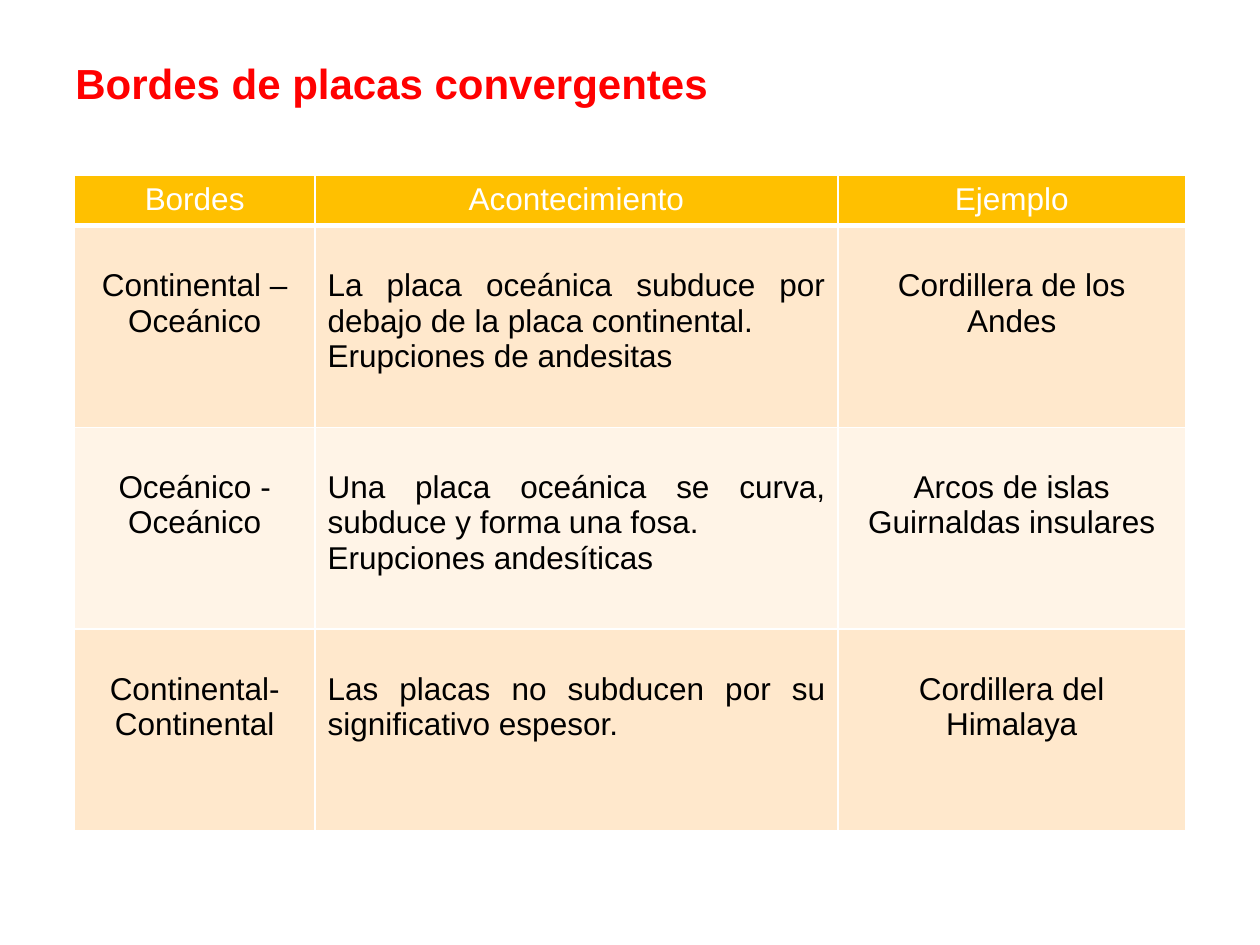
import pptx
import pptx.util
import pptx.dml.color
import pptx.enum.text
import pptx.oxml
import pptx.oxml.ns

Pt = pptx.util.Pt
RGBColor = pptx.dml.color.RGBColor
ALIGN = pptx.enum.text.PP_ALIGN
ANCHOR = pptx.enum.text.MSO_ANCHOR

RED = RGBColor(0xFF, 0x00, 0x00)
BLACK = RGBColor(0x00, 0x00, 0x00)
WHITE = RGBColor(0xFF, 0xFF, 0xFF)
AMBER = RGBColor(0xFF, 0xC0, 0x00)
PEACH = RGBColor(0xFF, 0xE8, 0xCC)
CREAM = RGBColor(0xFF, 0xF4, 0xE7)

TITLE_FONT = {"name": "Arial", "size": Pt(24), "bold": True}
TABLE_FONT = {"name": "Arial", "size": Pt(18), "bold": False}
CELL_MARGINS = {
    "margin_left": Pt(7.2),
    "margin_right": Pt(7.2),
    "margin_top": Pt(3.6),
    "margin_bottom": Pt(3.6),
}
BODY_MARGINS = {**CELL_MARGINS, "margin_top": Pt(24.3)}

COLUMN_WIDTHS = [137.5, 298.8, 198.7]
HEADER_HEIGHT = 28.8
BODY_HEIGHT = 115.2
BODY_ALIGNMENTS = [ALIGN.CENTER, ALIGN.JUSTIFY, ALIGN.CENTER]
HEADINGS = ["Bordes", "Acontecimiento", "Ejemplo"]
BOUNDARIES = [
    [
        ["Continental – Oceánico"],
        [
            "La placa oceánica subduce por debajo de la placa continental.",
            "Erupciones de andesitas",
        ],
        ["Cordillera de los Andes"],
    ],
    [
        ["Oceánico - Oceánico"],
        [
            "Una placa oceánica se curva, subduce y forma una fosa.",
            "Erupciones andesíticas",
        ],
        ["Arcos de islas", "Guirnaldas insulares"],
    ],
    [
        ["Continental-Continental"],
        ["Las placas no subducen por su significativo espesor."],
        ["Cordillera del Himalaya"],
    ],
]


def set_values(target, values):
    for name, value in values.items():
        setattr(target, name, value)


def write_paragraphs(frame, lines, font, color, alignment):
    for index, line in enumerate(lines):
        para = frame.paragraphs[0] if index == 0 else frame.add_paragraph()
        para.alignment = alignment
        span = para.add_run()
        span.text = line
        set_values(span.font, font)
        span.font.color.rgb = color


def set_borders(cell, bottom_width):
    properties = cell._tc.get_or_add_tcPr()
    widths = {"lnL": 1, "lnR": 1, "lnT": 1, "lnB": bottom_width}
    for index, (side, width) in enumerate(widths.items()):
        border = pptx.oxml.parse_xml(
            f'<a:{side} {pptx.oxml.ns.nsdecls("a")} w="{Pt(width)}">'
            f'<a:solidFill><a:srgbClr val="{WHITE}"/></a:solidFill></a:{side}>'
        )
        properties.insert(index, border)


def fill_cell(cell, lines, fill, color, alignment, margins, bottom_width):
    set_values(cell, margins)
    cell.vertical_anchor = ANCHOR.TOP
    cell.fill.solid()
    cell.fill.fore_color.rgb = fill
    set_borders(cell, bottom_width)
    write_paragraphs(cell.text_frame, lines, TABLE_FONT, color, alignment)


def add_title(page, left, top, width, height):
    box = page.shapes.add_textbox(Pt(left), Pt(top), Pt(width), Pt(height))
    frame = box.text_frame
    set_values(frame, {"word_wrap": True, "vertical_anchor": ANCHOR.MIDDLE})
    write_paragraphs(
        frame, ["Bordes de placas convergentes"], TITLE_FONT, RED, ALIGN.LEFT
    )
    frame.paragraphs[0].line_spacing = 0.9


def add_boundary_table(page, left, top):
    row_heights = [HEADER_HEIGHT] + [BODY_HEIGHT] * len(BOUNDARIES)
    table = page.shapes.add_table(
        len(row_heights), len(COLUMN_WIDTHS),
        Pt(left), Pt(top), Pt(sum(COLUMN_WIDTHS)), Pt(sum(row_heights)),
    ).table
    for column, width in zip(table.columns, COLUMN_WIDTHS):
        column.width = Pt(width)
    for row, height in zip(table.rows, row_heights):
        row.height = Pt(height)
    for column_index, heading in enumerate(HEADINGS):
        fill_cell(
            table.cell(0, column_index), [heading],
            AMBER, WHITE, ALIGN.CENTER, CELL_MARGINS, 3,
        )
    for row_index, boundary in enumerate(BOUNDARIES, start=1):
        fill = PEACH if row_index % 2 else CREAM
        for column_index, lines in enumerate(boundary):
            fill_cell(
                table.cell(row_index, column_index), lines,
                fill, BLACK, BODY_ALIGNMENTS[column_index], BODY_MARGINS, 1,
            )


def main():
    deck = pptx.Presentation()
    set_values(deck, {"slide_width": Pt(720), "slide_height": Pt(540)})
    page = deck.slides.add_slide(deck.slide_layouts[6])
    add_title(page, 36, 21.6, 648, 55.4)
    add_boundary_table(page, 42.5, 100.2)
    deck.save("out.pptx")


if __name__ == "__main__":
    main()
